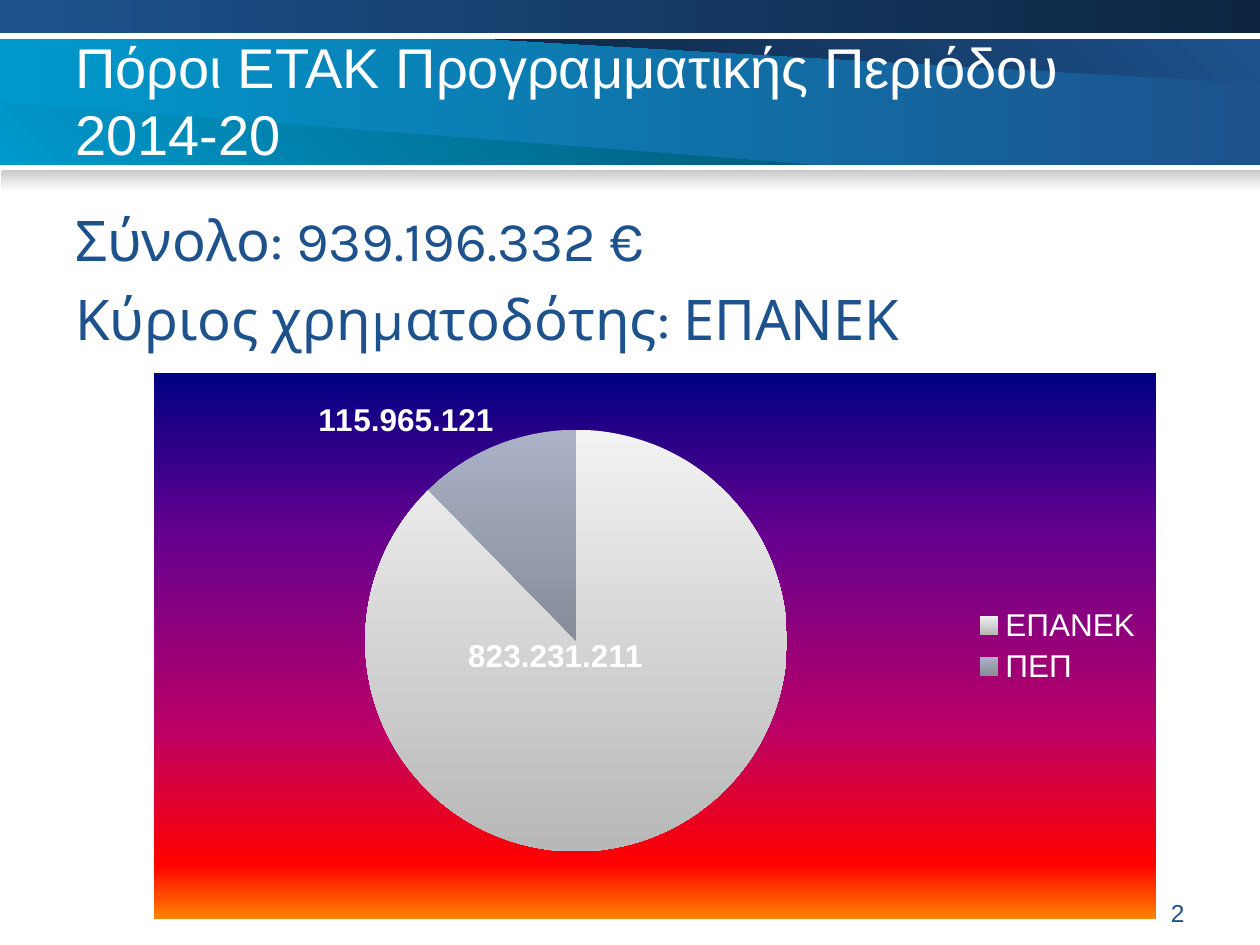
import pptx
import pptx.util
import pptx.chart.data
import pptx.enum.chart
import pptx.enum.shapes
import pptx.enum.text
import pptx.dml.color
import pptx.oxml
import pptx.oxml.ns

Cm, Pt = pptx.util.Cm, pptx.util.Pt
ALIGN, ANCHOR = pptx.enum.text.PP_ALIGN, pptx.enum.text.MSO_ANCHOR
LABEL = pptx.enum.chart.XL_LABEL_POSITION
qn = pptx.oxml.ns.qn

COLORS = {
    "cyan": "0099CC", "teal": "005A78", "blue": "1D528D", "navy": "0D2541",
    "grey": "CACACA", "white": "FFFFFF",
}
TITLE = "Πόροι ΕΤΑΚ Προγραμματικής Περιόδου 2014-20"
BODY = ["Σύνολο: 939.196.332 €", "Κύριος χρηματοδότης: ΕΠΑΝΕΚ"]
PAGE = "2"

# left, top, width, height in cm; gradient colours; angle
BANDS = [
    ((0, 0.79, 25.4, 2.54), ("cyan", "blue"), 0),
    ((0, 0, 25.4, 0.66), ("blue", "navy"), 0),
    ((0.03, 3.43, 25.37, 0.43), ("grey", "white"), 90),
]
WEDGES = [
    ([(25.4, 0.79), (9.98, 0.79), (25.4, 1.68)], ("blue", "navy"), 135),
    ([(0, 2.06), (16.33, 3.32), (0, 3.32)], ("cyan", "teal"), 315),
]

# category, value, gradient, label position, label offset as share of the chart
SLICES = [
    ("ΕΠΑΝΕΚ", 823231211, ("F2F2F2", "B8B8B8"), LABEL.CENTER, (-0.06, -0.15)),
    ("ΠΕΠ", 115965121, ("ABB2C8", "868C98"), LABEL.OUTSIDE_END, None),
]
DOTTED = '000"."000"."000'
CHART_BOX = (3.1, 7.52, 20.2, 11)
CHART_STOPS = [(0, "000082"), (30, "66008F"), (65, "BA0066"),
               (90, "FF0000"), (100, "FF8200")]
PLOT = {"x": 0.083, "y": 0.104, "w": 0.677, "h": 0.773}


def rgb(name):
    return pptx.dml.color.RGBColor.from_string(COLORS[name])


def ends(names):
    return [(pos, COLORS.get(n, n)) for pos, n in zip((0, 100), names)]


def gradient_xml(stops, angle):
    gs = "".join(f'<a:gs pos="{pos * 1000}"><a:srgbClr val="{c}"/></a:gs>'
                 for pos, c in stops)
    return pptx.oxml.parse_xml(
        f'<a:gradFill {pptx.oxml.ns.nsdecls("a")} rotWithShape="1">'
        f'<a:gsLst>{gs}</a:gsLst>'
        f'<a:lin ang="{angle * 60000}" scaled="0"/></a:gradFill>')


def paint(sp, names, angle):
    sp.shadow.inherit = False
    sp.line.fill.background()
    sp.fill.solid()
    solid = sp._element.spPr.find(qn("a:solidFill"))
    solid.getparent().replace(solid, gradient_xml(ends(names), angle))


def add_band(s, box, names, angle):
    kind = pptx.enum.shapes.MSO_SHAPE.RECTANGLE
    paint(s.shapes.add_shape(kind, *map(Cm, box)), names, angle)


def add_wedge(s, points, names, angle):
    pts = [(Cm(x), Cm(y)) for x, y in points]
    fb = s.shapes.build_freeform(*pts[0])
    fb.add_line_segments(pts[1:], close=True)
    paint(fb.convert_to_shape(), names, angle)


def add_text(s, lines, box, size=32, font="Arial", color="blue",
             align=ALIGN.LEFT, anchor=ANCHOR.TOP, gap=0):
    tf = s.shapes.add_textbox(*map(Cm, box)).text_frame
    tf.word_wrap = True
    tf.vertical_anchor = anchor
    for i, line in enumerate(lines):
        p = tf.paragraphs[0] if i == 0 else tf.add_paragraph()
        p.alignment = align
        if i:
            p.space_before = Pt(gap)
        r = p.add_run()
        r.text = line
        r.font.size, r.font.name = Pt(size), font
        r.font.color.rgb = rgb(color)


def layout_xml(**values):
    """Manual layout; a plot area (with w and h) is measured on its inner edge."""
    kids = ""
    if "w" in values:
        kids = ('<c:layoutTarget val="inner"/><c:xMode val="edge"/>'
                '<c:yMode val="edge"/>')
    kids += "".join(f'<c:{k} val="{v}"/>' for k, v in values.items())
    return pptx.oxml.parse_xml(
        f'<c:layout {pptx.oxml.ns.nsdecls("c")}>'
        f'<c:manualLayout>{kids}</c:manualLayout></c:layout>')


def set_font(font, bold=False):
    font.size, font.name, font.bold = Pt(18), "Arial", bold
    font.color.rgb = rgb("white")


def format_label(label, dots, index, position, offset):
    """Show the value with dotted thousands on one line."""
    set_font(label.font, bold=True)
    label.position = position
    dl = dots.findall(".//" + qn("c:dLbl"))[index]
    tx = dl.find(qn("c:txPr"))
    tx.find(qn("a:bodyPr")).set("wrap", "none")
    fmt = pptx.oxml.parse_xml(
        f'<c:numFmt {pptx.oxml.ns.nsdecls("c")} sourceLinked="0"/>')
    fmt.set("formatCode", DOTTED)
    before = dl.find(qn("c:spPr"))
    (tx if before is None else before).addprevious(fmt)
    if offset:
        dl.find(qn("c:idx")).addnext(layout_xml(x=offset[0], y=offset[1]))


def add_pie(s):
    data = pptx.chart.data.CategoryChartData(number_format="#,##0")
    data.categories = [row[0] for row in SLICES]
    data.add_series("Series 1", [row[1] for row in SLICES])
    chart = s.shapes.add_chart(pptx.enum.chart.XL_CHART_TYPE.PIE,
                               *map(Cm, CHART_BOX), data).chart
    chart.has_title = False
    set_font(chart.font)
    chart.has_legend = True
    chart.legend.position = pptx.enum.chart.XL_LEGEND_POSITION.RIGHT
    chart.legend.include_in_layout = False
    set_font(chart.legend.font)

    plot = chart.plots[0]
    plot.vary_by_categories = True
    series = plot.series[0]
    labels = series.data_labels
    labels.show_value = True
    labels.number_format, labels.number_format_is_linked = DOTTED, False
    for i, (_, _, names, position, offset) in enumerate(SLICES):
        point = series.points[i]
        point.format.line.fill.background()
        point.format.fill.solid()
        solid = next(series._element.findall(qn("c:dPt"))[i].iter(
            qn("a:solidFill")))
        solid.getparent().replace(solid, gradient_xml(ends(names), 90))
        format_label(point.data_label, series._element, i, position, offset)

    space = chart._chartSpace
    area = space.chart.plotArea
    old = area.find(qn("c:layout"))
    if old is not None:
        area.remove(old)
    area.insert(0, layout_xml(**PLOT))
    sppr = pptx.oxml.parse_xml(
        f'<c:spPr {pptx.oxml.ns.nsdecls("c", "a")}><a:ln><a:noFill/></a:ln></c:spPr>')
    sppr.insert(0, gradient_xml(CHART_STOPS, 90))
    space.chart.addnext(sppr)


def main():
    prs = pptx.Presentation()
    prs.slide_width, prs.slide_height = Cm(25.4), Cm(19.05)
    s = prs.slides.add_slide(prs.slide_layouts[6])
    add_band(s, *BANDS[0])
    for wedge in WEDGES:
        add_wedge(s, *wedge)
    for band in BANDS[1:]:
        add_band(s, *band)
    add_text(s, [TITLE], (1.27, 0.53, 22.86, 3.4), color="white")
    add_text(s, BODY, (1.27, 4.01, 22.86, 13.74), font="Karla", gap=6.8)
    add_text(s, [PAGE], (18.21, 17.98, 5.92, 0.69), size=14,
             align=ALIGN.RIGHT)
    add_pie(s)
    prs.save("out.pptx")


if __name__ == "__main__":
    main()
